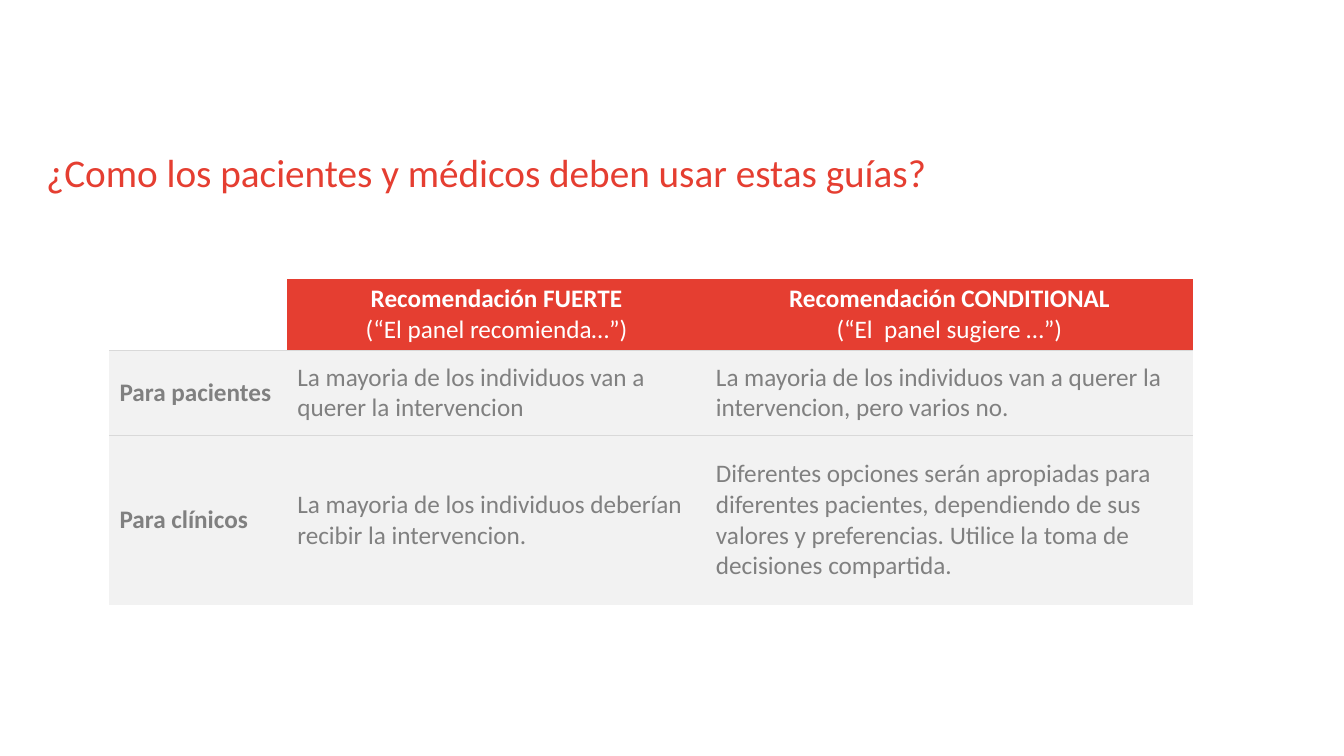
from lxml.etree import SubElement
from pptx import Presentation
from pptx.dml.color import RGBColor as RGB
from pptx.enum.text import MSO_ANCHOR as ANCHOR, MSO_AUTO_SIZE as FIT, PP_ALIGN as ALIGN
from pptx.oxml.ns import qn
from pptx.util import Pt

COLORS = {"red": "E53E31", "white": "FFFFFF", "gray": "808080", "panel": "F2F2F2", "rule": "D9D9D9"}
FONT = "Calibri"
COL_WIDTHS = [127, 299, 348]
ROW_HEIGHTS = [51, 60.5, 121.5]
ROWS = [
    ["",
     "Recomendación FUERTE\n(“El panel recomienda…”)",
     "Recomendación CONDITIONAL\n(“El  panel sugiere …”)"],
    ["Para pacientes",
     "La mayoria de los individuos van a querer la intervencion",
     "La mayoria de los individuos van a querer la intervencion, pero varios no."],
    ["Para clínicos",
     "La mayoria de los individuos deberían recibir la intervencion.",
     "Diferentes opciones serán apropiadas para diferentes pacientes, dependiendo de sus "
     "valores y preferencias. Utilice la toma de decisiones compartida."],
]


def write(p, text, size=18, color="gray", bold=False, align=ALIGN.LEFT):
    """Write one formatted run into a paragraph."""
    p.alignment = align
    r = p.add_run()
    r.text = text
    r.font.name, r.font.size, r.font.bold = FONT, Pt(size), bold
    r.font.color.rgb = RGB.from_string(COLORS[color])


def set_borders(cell, ruled):
    """Rule the named sides of a cell and clear the others."""
    tc_pr = cell._tc.get_or_add_tcPr()
    for side in "LRTB":
        ln = SubElement(tc_pr, qn(f"a:ln{side}"), w=str(Pt(1)))
        if side in ruled:
            fill = SubElement(ln, qn("a:solidFill"))
            SubElement(fill, qn("a:srgbClr"), val=COLORS["rule"])
        else:
            SubElement(ln, qn("a:noFill"))


def add_title(s, text, left, top, width, height):
    """Place and format the slide title."""
    title = s.shapes.title
    title.left, title.top, title.width, title.height = map(Pt, (left, top, width, height))
    tf = title.text_frame
    tf.margin_left = tf.margin_right = tf.margin_top = tf.margin_bottom = 0
    tf.auto_size, tf.vertical_anchor, tf.word_wrap = FIT.NONE, ANCHOR.MIDDLE, True
    write(tf.paragraphs[0], text, size=28, color="red")


def fill_cell(cell, text, row, col):
    """Fill one table cell with its text, colour and rules."""
    header = row == 0
    cell.vertical_anchor = ANCHOR.MIDDLE
    set_borders(cell, ["B", "TB", "T"][row])
    if not text:
        cell.fill.background()
        return
    cell.fill.solid()
    cell.fill.fore_color.rgb = RGB.from_string(COLORS["red" if header else "panel"])
    tf = cell.text_frame
    for i, line in enumerate(text.split("\n")):
        p = tf.add_paragraph() if i else tf.paragraphs[0]
        write(p, line, color="white" if header else "gray",
              bold=i == 0 and (header or col == 0),
              align=ALIGN.CENTER if header else ALIGN.LEFT)


def add_guide_table(s, left, top):
    """Add the table of recommendations by audience."""
    frame = s.shapes.add_table(len(ROWS), len(COL_WIDTHS), Pt(left), Pt(top),
                               Pt(sum(COL_WIDTHS)), Pt(sum(ROW_HEIGHTS)))
    table = frame.table
    table.horz_banding = table.first_row = False
    for column, width in zip(table.columns, COL_WIDTHS):
        column.width = Pt(width)
    for row, height in zip(table.rows, ROW_HEIGHTS):
        row.height = Pt(height)
    for i, texts in enumerate(ROWS):
        for j, text in enumerate(texts):
            fill_cell(table.cell(i, j), text, i, j)


def main():
    """Build and save the slide."""
    prs = Presentation()
    prs.slide_width, prs.slide_height = Pt(960), Pt(540)
    s = prs.slides.add_slide(prs.slide_layouts[5])
    add_title(s, "¿Como los pacientes y médicos deben usar estas guías?", 33, 106, 864, 33)
    add_guide_table(s, 78.2, 199.2)
    prs.save("out.pptx")


if __name__ == "__main__":
    main()
